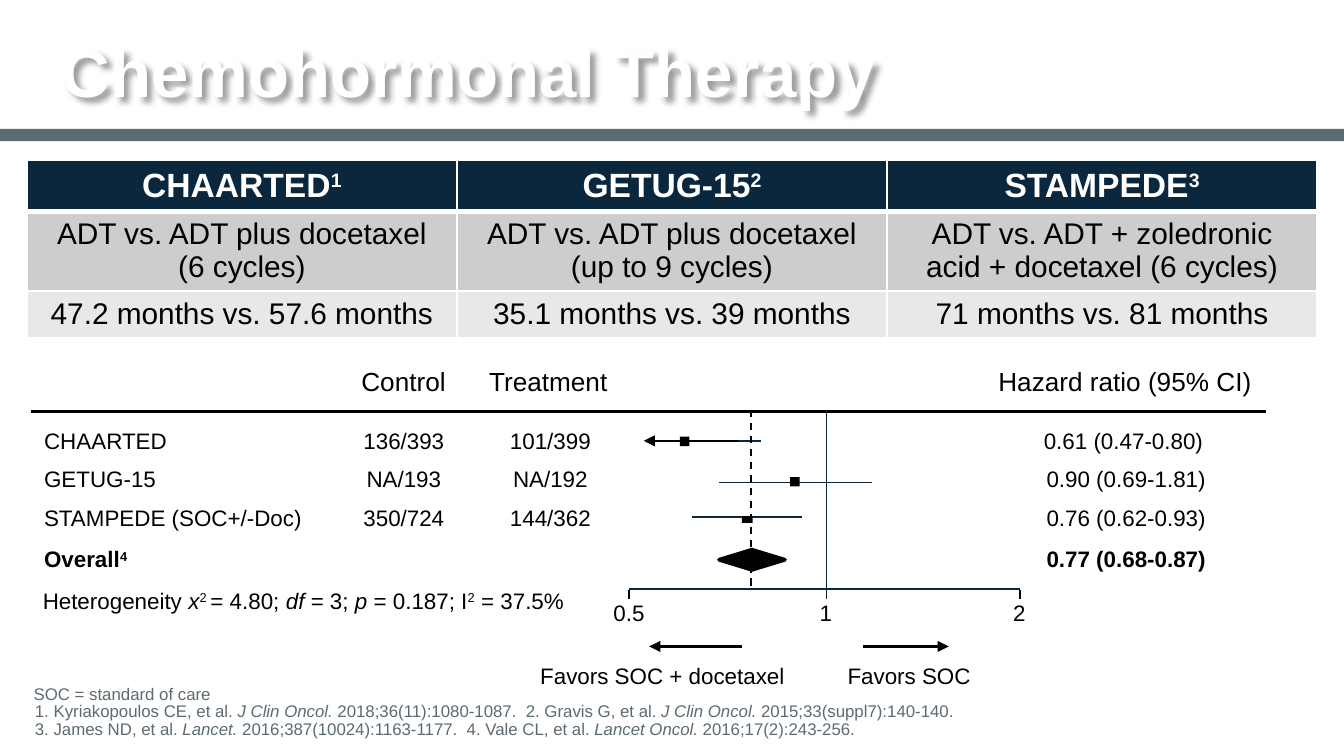
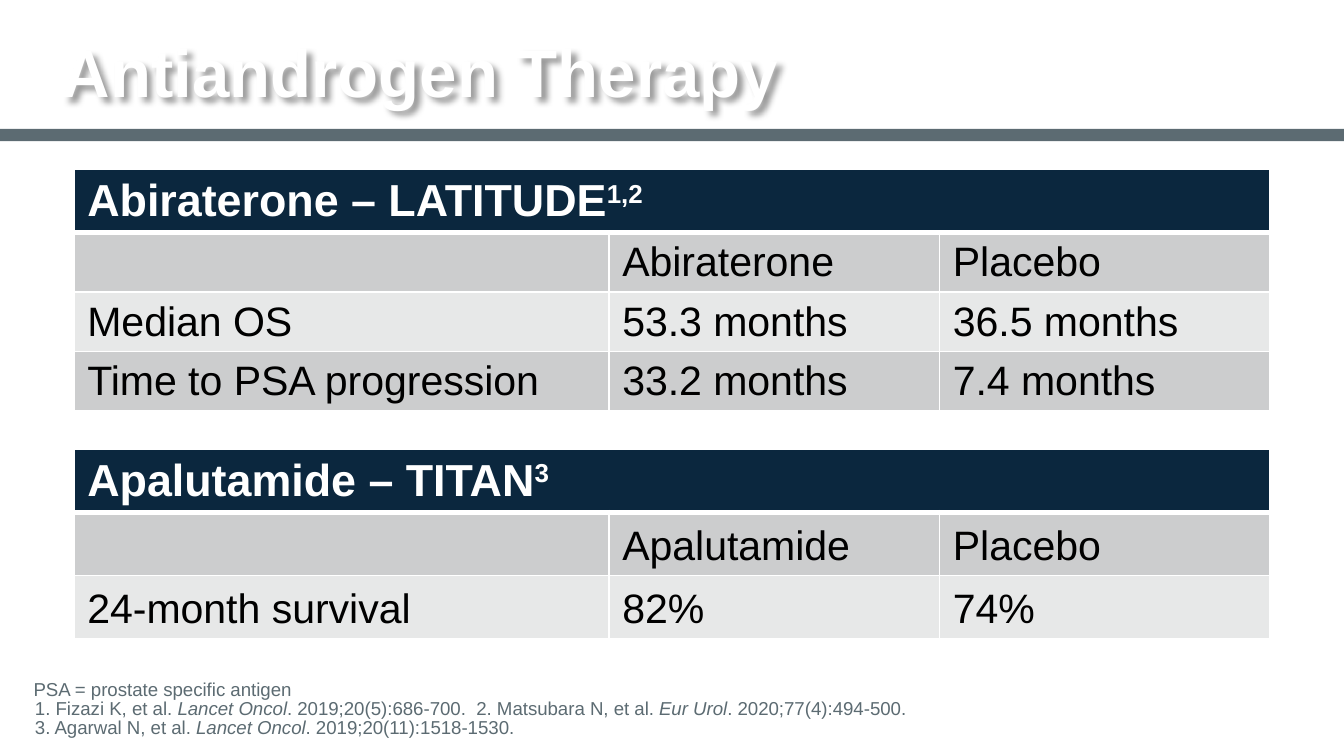
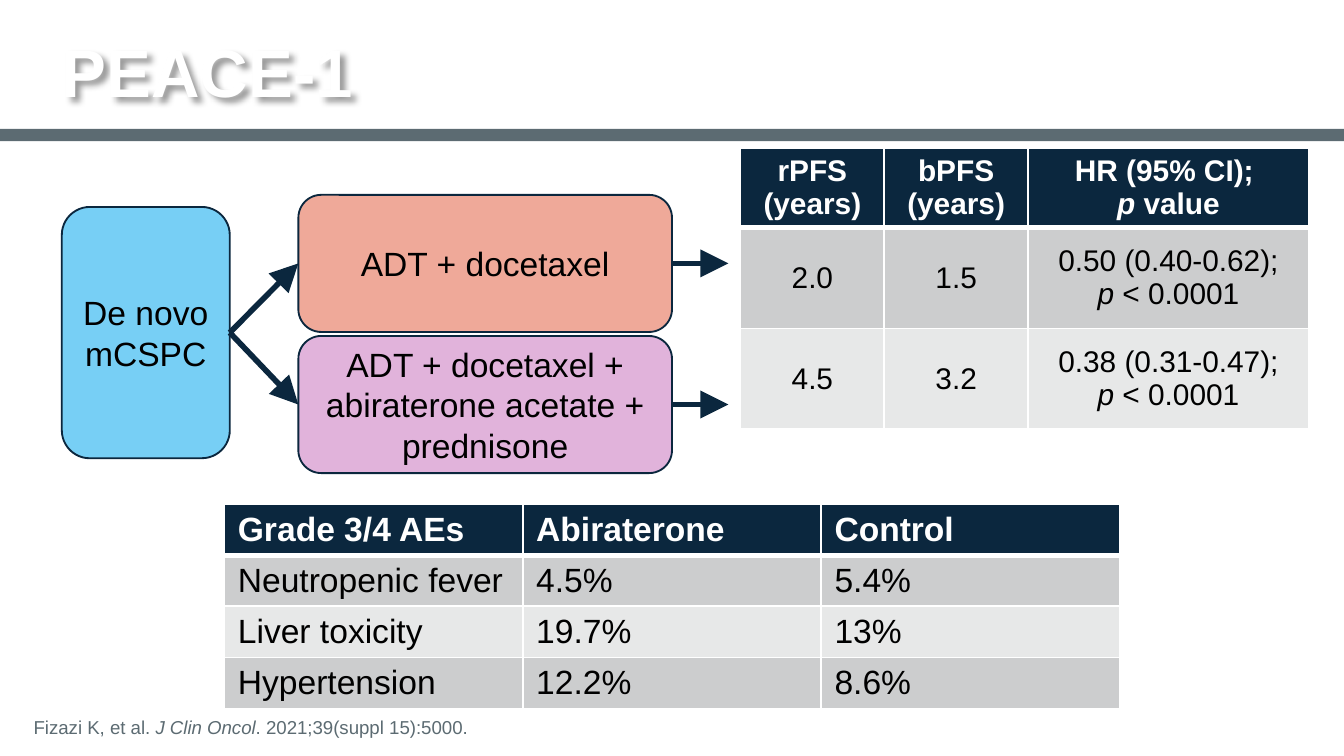
from copy import deepcopy

from lxml import etree
from pptx import Presentation
from pptx.dml.color import RGBColor
from pptx.enum.dml import MSO_LINE
from pptx.enum.shapes import MSO_CONNECTOR, MSO_SHAPE
from pptx.enum.text import MSO_ANCHOR, MSO_AUTO_SIZE, PP_ALIGN
from pptx.oxml.ns import qn
from pptx.util import Inches, Pt

LEFT, CENTER = PP_ALIGN.LEFT, PP_ALIGN.CENTER
TOP, MIDDLE, BOTTOM = MSO_ANCHOR.TOP, MSO_ANCHOR.MIDDLE, MSO_ANCHOR.BOTTOM
NO_FIT, FIT_SHAPE = MSO_AUTO_SIZE.NONE, MSO_AUTO_SIZE.SHAPE_TO_FIT_TEXT
RECTANGLE, ROUNDED = MSO_SHAPE.RECTANGLE, MSO_SHAPE.ROUNDED_RECTANGLE
DIAMOND = MSO_SHAPE.FLOWCHART_DECISION
STRAIGHT, DASH = MSO_CONNECTOR.STRAIGHT, MSO_LINE.DASH
RIGHT_SIDE, LEFT_SIDE = 3, 1

FONT = "Arial"
WHITE = RGBColor(0xFF, 0xFF, 0xFF)
BLACK = RGBColor(0, 0, 0)
NAVY = RGBColor(0x0B, 0x27, 0x3E)
SLATE = RGBColor(0x5C, 0x6B, 0x72)
DARK_ROW = RGBColor(0xCC, 0xCD, 0xCE)
LIGHT_ROW = RGBColor(0xE7, 0xE8, 0xE8)
SKY = RGBColor(0x77, 0xCF, 0xF5)
SALMON = RGBColor(0xEF, 0xA9, 0x99)
ORCHID = RGBColor(0xE1, 0xB3, 0xDB)


def write(frame, text, size, color=BLACK, bold=False, align=LEFT):
    """Fill a frame; *italic*, ^superscript^, newline = paragraph, \\v = line break."""
    for index, line in enumerate(text.split("\n")):
        paragraph = frame.add_paragraph() if index else frame.paragraphs[0]
        paragraph.alignment = align
        for i, part in enumerate(line.split("*")):
            for j, piece in enumerate(part.split("^")):
                for k, segment in enumerate(piece.split("\v")):
                    if k:
                        paragraph.add_line_break()
                    if not segment:
                        continue
                    run = paragraph.add_run()
                    run.text = segment
                    run.font.name, run.font.size = FONT, Pt(size)
                    run.font.bold, run.font.italic = bold, i % 2 == 1
                    run.font.color.rgb = color
                    if j % 2:
                        run._r.get_or_add_rPr().set("baseline", "30000")
        for line_break in paragraph._p.findall(qn("a:br")):
            line_break.append(deepcopy(paragraph.runs[0]._r.rPr))


def add_line(slide, x1, y1, x2, y2, color=NAVY, width=1, arrow=None):
    """Draw a straight line; arrow is the size of its head, "med" or "lg"."""
    line = slide.shapes.add_connector(STRAIGHT, Inches(x1), Inches(y1), Inches(x2), Inches(y2))
    line.line.color.rgb = color
    line.line.width = Pt(width)
    if arrow:
        etree.SubElement(line.line._get_or_add_ln(), qn("a:tailEnd"),
                         type="triangle", w=arrow, len=arrow)
    etree.SubElement(line._element.spPr, qn("a:effectLst"))
    return line


prs = Presentation()
prs.slide_width = Inches(10)
prs.slide_height = prs.slide_width * 9 // 16

# Shared layout: title place
layout = prs.slide_layouts[1]
title_place = layout.placeholders[0]
title_place.left, title_place.top = Inches(0.46), Inches(0.26)
title_place.width, title_place.height = Inches(9.09), Inches(0.62)

# Title, reference height, reference size, references
SLIDES = [
    ("Chemohormonal Therapy", 0.52, 9,
     "SOC = standard of care\v1. Kyriakopoulos CE, et al. *J Clin Oncol. *2018;36(11):1080-1087.  "
     "2. Gravis G, et al. *J Clin Oncol. *2015;33(suppl7):140-140.  \v"
     "3. James ND, et al. *Lancet. *2016;387(10024):1163-1177.  "
     "4. Vale CL, et al. *Lancet Oncol. *2016;17(2):243-256."),
    ("Antiandrogen Therapy", 0.56, 10,
     "PSA = prostate specific antigen\v1. Fizazi K, et al. *Lancet Oncol*. 2019;20(5):686-700.  "
     "2. Matsubara N, et al. *Eur Urol*. 2020;77(4):494-500.  \v"
     "3. Agarwal N, et al. *Lancet Oncol*. 2019;20(11):1518-1530."),
    ("PEACE-1", 0.27, 10, "Fizazi K, et al. *J Clin Oncol*. 2021;39(suppl 15):5000."),
]

for title_text, reference_height, reference_size, reference_text in SLIDES:
    slide = prs.slides.add_slide(layout)
    title, references = slide.shapes.title, slide.placeholders[1]

    frame = title.text_frame
    frame.auto_size, frame.vertical_anchor = NO_FIT, MIDDLE
    frame.margin_left = frame.margin_right = 0
    write(frame, title_text, 36, WHITE, bold=True)
    frame.paragraphs[0].line_spacing = 0.85
    effects = etree.SubElement(title._element.spPr, qn("a:effectLst"))
    shadow = etree.SubElement(effects, qn("a:outerShdw"), blurRad="38100", dist="38100",
                              dir="2700000", algn="tl", rotWithShape="0")
    shade = etree.SubElement(shadow, qn("a:srgbClr"), val="000000")
    etree.SubElement(shade, qn("a:alpha"), val="40000")

    references.left, references.top = 0, prs.slide_height - Inches(reference_height)
    references.width, references.height = prs.slide_width, Inches(reference_height)
    frame = references.text_frame
    frame.auto_size, frame.vertical_anchor = NO_FIT, BOTTOM
    frame.margin_left, frame.margin_bottom = Inches(0.25), Inches(0.13)
    frame.margin_right = frame.margin_top = 0
    properties = frame.paragraphs[0]._p.get_or_add_pPr()
    properties.set("marL", str(Inches(0.01)))
    properties.set("indent", str(Inches(-0.01)))
    etree.SubElement(properties, qn("a:buNone"))
    write(frame, reference_text, reference_size, SLATE)
    frame.paragraphs[0].line_spacing = 0.85
    frame.paragraphs[0].space_before = Pt(0)

chemo, antiandrogen, peace = prs.slides

# Band shared through the master
band = chemo.shapes.add_shape(RECTANGLE, 0, Inches(0.96), prs.slide_width, Inches(0.09))
band.shadow.inherit = False
band.fill.solid()
band.fill.fore_color.rgb = SLATE
band.line.fill.background()
prs.slide_master.shapes._spTree.insert(2, band._element)

# Slide, left, top, column widths, row heights, header size, body size,
# alignment, header anchor, body anchor, rows
TABLES = [
    (chemo, 0.2, 1.19, [3.2] * 3, [0.21, 0.44, 0.31], 18, 16, CENTER, MIDDLE, MIDDLE, [
        ["CHAARTED^1^", "GETUG-15^2^", "STAMPEDE^3^"],
        ["ADT vs. ADT plus docetaxel (6 cycles)", "ADT vs. ADT plus docetaxel (up to 9 cycles)",
         "ADT vs. ADT + zoledronic acid + docetaxel (6 cycles)"],
        ["47.2 months vs. 57.6 months", "35.1 months vs. 39 months", "71 months vs. 81 months"]]),
    (antiandrogen, 0.55, 1.26, [3.98, 2.46, 2.46], [0.41] * 4, 24, 22, LEFT, TOP, BOTTOM, [
        ["Abiraterone – LATITUDE^1,2^"],
        ["", "Abiraterone", "Placebo"],
        ["Median OS", "53.3 months", "36.5 months"],
        ["Time to PSA progression", "33.2 months", "7.4 months"]]),
    (antiandrogen, 0.55, 3.34, [3.98, 2.46, 2.46], [0.47] * 3, 24, 22, LEFT, TOP, BOTTOM, [
        ["Apalutamide – TITAN^3^"],
        ["", "Apalutamide", "Placebo"],
        ["24-month survival", "82%", "74%"]]),
    (peace, 5.51, 1.1, [1.07, 1.07, 2.09], [0.59, 0.75, 0.75], 16, 16, CENTER, MIDDLE, MIDDLE, [
        ["rPFS\n(years)", "bPFS\n(years)", "HR (95% CI); \n*p* value"],
        ["2.0", "1.5", "0.50 (0.40-0.62);\n*p* < 0.0001"],
        ["4.5", "3.2", "0.38 (0.31-0.47);\n*p* < 0.0001"]]),
    (peace, 1.67, 3.75, [2.22] * 3, [0.35] * 4, 18, 18, LEFT, MIDDLE, MIDDLE, [
        ["Grade 3/4 AEs", "Abiraterone", "Control"],
        ["Neutropenic fever", "4.5%", "5.4%"],
        ["Liver toxicity", "19.7%", "13%"],
        ["Hypertension", "12.2%", "8.6%"]]),
]

for (slide, left, top, widths, heights, header_size, body_size,
     align, header_anchor, body_anchor, rows) in TABLES:
    table = slide.shapes.add_table(len(rows), len(widths), Inches(left), Inches(top),
                                   Inches(sum(widths)), Inches(sum(heights))).table
    for column, width in zip(table.columns, widths):
        column.width = Inches(width)
    for r, (row, height) in enumerate(zip(rows, heights)):
        table.rows[r].height = Inches(height)
        if len(row) == 1:
            table.cell(r, 0).merge(table.cell(r, len(widths) - 1))
        header = r == 0
        for c in range(len(widths)):
            cell = table.cell(r, c)
            for side in ("lnL", "lnR", "lnT", "lnB"):
                thick = (r, side) in ((0, "lnB"), (1, "lnT"))
                border = etree.SubElement(cell._tc.get_or_add_tcPr(), qn("a:" + side),
                                          w=str(Pt(3 if thick else 1)))
                paint = etree.SubElement(border, qn("a:solidFill"))
                etree.SubElement(paint, qn("a:srgbClr"), val=str(WHITE))
            cell.fill.solid()
            cell.fill.fore_color.rgb = NAVY if header else DARK_ROW if r % 2 else LIGHT_ROW
            cell.vertical_anchor = header_anchor if header else body_anchor
            if c < len(row):
                write(cell.text_frame, row[c], header_size if header else body_size,
                      WHITE if header else BLACK, header, align)

# Chemohormonal Therapy: forest plot
AXIS_Y = 4.38
add_line(chemo, 0.23, 3.06, 9.42, 3.06, BLACK, 1.5)
add_line(chemo, 6.15, 3.05, 6.15, 4.46)
for low, high, y in [(4.83, 5.66, 3.28), (5.35, 6.49, 3.59), (5.15, 5.97, 3.85),
                     (4.68, 7.59, AXIS_Y)]:
    add_line(chemo, high, y, low, y)
add_line(chemo, 5.59, 3.05, 5.59, AXIS_Y, BLACK).line.dash_style = DASH
for tick_x in (4.68, 7.59):
    add_line(chemo, tick_x, 4.39, tick_x, 4.46, BLACK)
add_line(chemo, 5.49, 3.28, 4.79, 3.28, BLACK, arrow="med")
add_line(chemo, 5.52, 4.81, 4.83, 4.81, BLACK, 2, "med")
add_line(chemo, 6.42, 4.81, 7.06, 4.81, BLACK, 2, "med")

for outline, *place in [(RECTANGLE, 5.06, 3.25, 0.07, 0.07), (RECTANGLE, 5.88, 3.55, 0.07, 0.07),
                        (RECTANGLE, 5.52, 3.84, 0.08, 0.05), (DIAMOND, 5.35, 4.09, 0.49, 0.15)]:
    estimate = chemo.shapes.add_shape(outline, *map(Inches, place))
    estimate.shadow.inherit = False
    estimate.fill.solid()
    estimate.fill.fore_color.rgb = BLACK
    if outline == DIAMOND:
        estimate.line.color.rgb = BLACK
        estimate.line.width = Pt(2)
    else:
        estimate.line.fill.background()

# Text, left, top, width, size, alignment, bold
labels = [
    ("Control", 2.59, 2.67, 0.83, 14, LEFT, False),
    ("Treatment", 3.54, 2.67, 1.09, 14, LEFT, False),
    ("Hazard ratio (95% CI)", 7.33, 2.67, 2.1, 14, LEFT, False),
    ("Heterogeneity *x*^2 ^= 4.80; *df *= 3; *p *= 0.187; I^2^ = 37.5%",
     0.22, 4.32, 4.14, 12, LEFT, False),
    ("0.5", 4.46, 4.41, 0.44, 12, CENTER, False),
    ("1", 6, 4.41, 0.29, 12, CENTER, False),
    ("2", 7.44, 4.41, 0.29, 12, CENTER, False),
    ("Favors SOC + docetaxel", 3.91, 4.88, 2.04, 12, CENTER, False),
    ("Favors SOC", 6.2, 4.88, 1.13, 12, CENTER, False),
]
for study, study_width, top, control, treatment, ratio, ratio_left in [
        ("CHAARTED", 1.12, 3.13, "136/393", "101/399", "0.61 (0.47-0.80)", 7.66),
        ("GETUG-15", 1.04, 3.41, "NA/193", "NA/192", "0.90 (0.69-1.81)", 7.68),
        ("STAMPEDE (SOC+/-Doc)", 2.14, 3.7, "350/724", "144/362", "0.76 (0.62-0.93)", 7.68),
        ("Overall^4^", 0.86, 4.01, None, None, "0.77 (0.68-0.87)", 7.68)]:
    overall = control is None
    labels.append((study, 0.23, top, study_width, 12, LEFT, overall))
    labels.append((ratio, ratio_left, top, 1.4, 12, CENTER, overall))
    if not overall:
        labels.append((control, 2.6, top, 0.81, 12, CENTER, False))
        labels.append((treatment, 3.69, top, 0.81, 12, CENTER, False))

for text, left, top, width, size, align, bold in labels:
    label = chemo.shapes.add_textbox(Inches(left), Inches(top), Inches(width),
                                     Inches(0.34 if size == 14 else 0.3))
    label.text_frame.word_wrap = False
    label.text_frame.auto_size = FIT_SHAPE
    write(label.text_frame, text, size, bold=bold, align=align)

# PEACE-1: trial arms
boxes = []
for text, color, *place in [
        ("De novo\nmCSPC", SKY, 0.46, 1.54, 1.25, 1.87),
        ("ADT + docetaxel", SALMON, 2.22, 1.45, 2.78, 1.02),
        ("ADT + docetaxel + abiraterone acetate + prednisone", ORCHID, 2.22, 2.5, 2.78, 1.02)]:
    box = peace.shapes.add_shape(ROUNDED, *map(Inches, place))
    box.shadow.inherit = False
    box.fill.solid()
    box.fill.fore_color.rgb = color
    box.line.color.rgb = NAVY
    box.line.width = Pt(1)
    box.text_frame.word_wrap = True
    box.text_frame.vertical_anchor = MIDDLE
    write(box.text_frame, text, 18, align=CENTER)
    boxes.append(box)

population, *arms = boxes
for arm, y in zip(arms, (1.96, 3.01)):
    allocation = add_line(peace, 1.71, 2.48, 2.22, y, width=3, arrow="lg")
    allocation.begin_connect(population, RIGHT_SIDE)
    allocation.end_connect(arm, LEFT_SIDE)
    outcome = add_line(peace, 5, y, 5.42, y, width=3, arrow="lg")
    outcome.begin_connect(arm, RIGHT_SIDE)

prs.save("out.pptx")
